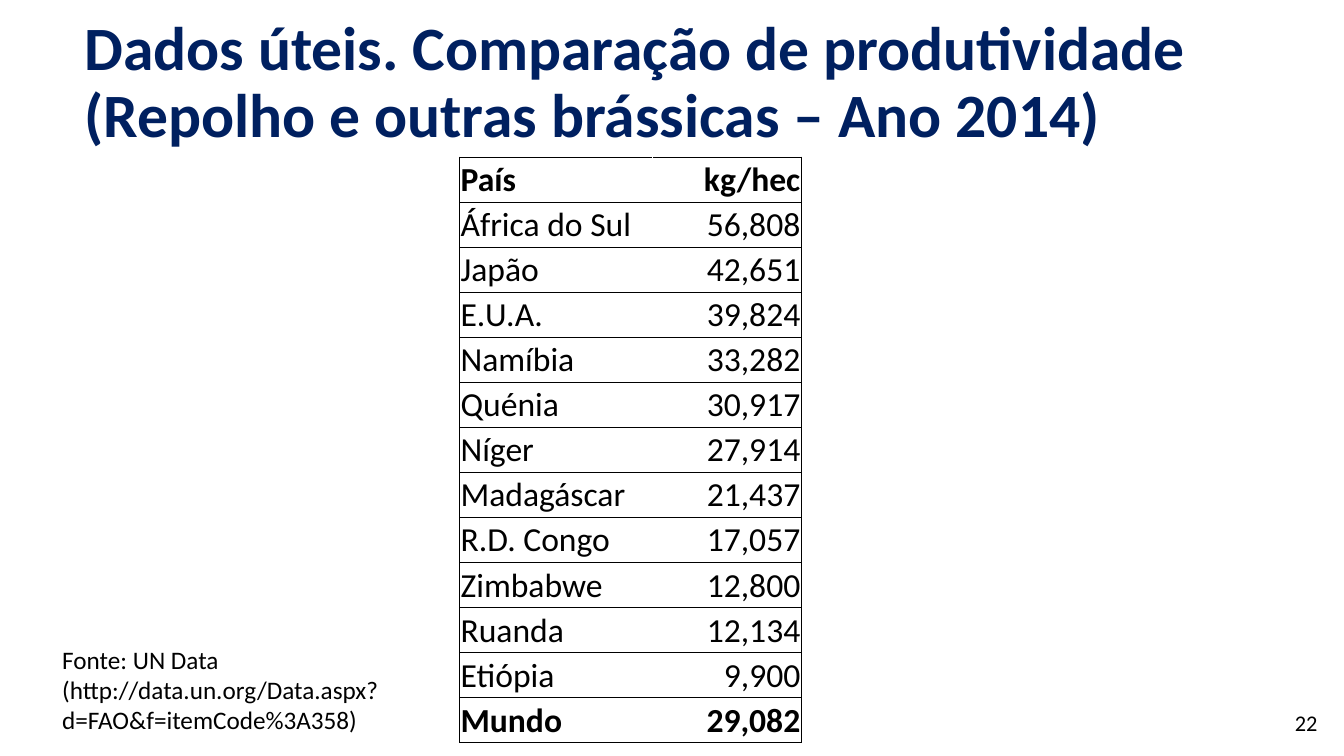
from dataclasses import dataclass

from lxml import etree
from pptx import Presentation
from pptx.dml.color import RGBColor
from pptx.enum import text as t
from pptx.oxml import ns
from pptx.util import Pt


@dataclass(frozen=True)
class Theme:
    font: str = "Calibri"
    title_color: RGBColor = RGBColor(0x00, 0x20, 0x60)
    ink: RGBColor = RGBColor(0, 0, 0)
    paper: RGBColor = RGBColor(255, 255, 255)
    title_size: float = 44
    table_size: float = 24
    source_size: float = 18
    number_size: float = 16


@dataclass(frozen=True)
class Label:
    text: str
    left: float
    top: float
    width: float
    height: float
    size: float
    color: RGBColor
    bold: bool = False
    align: t.PP_ALIGN = t.PP_ALIGN.LEFT
    anchor: t.MSO_ANCHOR = t.MSO_ANCHOR.MIDDLE
    line_spacing: float = 1.0


@dataclass(frozen=True)
class Yield:
    country: str
    amount: str
    bold: bool = False


THEME = Theme()

LABELS = [
    Label("Dados úteis. Comparação de produtividade\v(Repolho e outras brássicas – Ano 2014)",
          53.3, 7.9, 877.7, 104.4, THEME.title_size, THEME.title_color,
          bold=True, line_spacing=0.9),
    Label("22", 732.2, 501.8, 216, 28.8, THEME.number_size, THEME.ink,
          align=t.PP_ALIGN.RIGHT),
    Label("Fonte: UN Data (http://data.un.org/Data.aspx?d=FAO&f=itemCode%3A358)",
          37.4, 456.5, 266.4, 72.7, THEME.source_size, THEME.ink,
          anchor=t.MSO_ANCHOR.TOP),
]

YIELDS = [
    Yield("País", "kg/hec", bold=True),
    Yield("África do Sul", "56,808"),
    Yield("Japão", "42,651"),
    Yield("E.U.A.", "39,824"),
    Yield("Namíbia", "33,282"),
    Yield("Quénia", "30,917"),
    Yield("Níger", "27,914"),
    Yield("Madagáscar", "21,437"),
    Yield("R.D. Congo", "17,057"),
    Yield("Zimbabwe", "12,800"),
    Yield("Ruanda", "12,134"),
    Yield("Etiópia", "9,900"),
    Yield("Mundo", "29,082", bold=True),
]
TABLE_LEFT, TABLE_TOP = 328.3, 112.3
COLUMN_WIDTHS = (137.5, 106.6)
ROW_HEIGHT = 32.18


def style_paragraph(paragraph, size: float, color: RGBColor, bold: bool,
                    align: t.PP_ALIGN) -> None:
    paragraph.alignment = align
    font = paragraph.font
    font.name, font.size, font.bold = THEME.font, Pt(size), bold
    font.color.rgb = color


def add_label(slide, label: Label) -> None:
    box = slide.shapes.add_textbox(Pt(label.left), Pt(label.top),
                                   Pt(label.width), Pt(label.height))
    frame = box.text_frame
    frame.word_wrap = True
    frame.vertical_anchor = label.anchor
    frame.text = label.text
    paragraph = frame.paragraphs[0]
    paragraph.line_spacing = label.line_spacing
    style_paragraph(paragraph, label.size, label.color, label.bold, label.align)


def set_borders(cell, sides: str) -> None:
    """Draw 1 pt lines on the sides named by L, R, T and B, in that order."""
    properties = cell._tc.get_or_add_tcPr()
    for index, side in enumerate(sides):
        line = etree.Element(ns.qn(f"a:ln{side}"), w=str(Pt(1)))
        fill = etree.SubElement(line, ns.qn("a:solidFill"))
        etree.SubElement(fill, ns.qn("a:srgbClr"), val=str(THEME.ink))
        properties.insert(index, line)


def fill_cell(cell, content: str, bold: bool, align: t.PP_ALIGN, sides: str) -> None:
    cell.margin_left = cell.margin_right = cell.margin_top = Pt(0.7)
    cell.margin_bottom = Pt(0)
    cell.vertical_anchor = t.MSO_ANCHOR.MIDDLE
    cell.fill.solid()
    cell.fill.fore_color.rgb = THEME.paper
    set_borders(cell, sides)
    cell.text = content
    style_paragraph(cell.text_frame.paragraphs[0], THEME.table_size, THEME.ink, bold, align)


def add_yield_table(slide, yields: list[Yield]) -> None:
    table = slide.shapes.add_table(
        len(yields), len(COLUMN_WIDTHS), Pt(TABLE_LEFT), Pt(TABLE_TOP),
        Pt(sum(COLUMN_WIDTHS)), Pt(ROW_HEIGHT * len(yields))).table
    table.first_row = table.horz_banding = False
    for column, width in zip(table.columns, COLUMN_WIDTHS):
        column.width = Pt(width)
    for index, entry in enumerate(yields):
        table.rows[index].height = Pt(ROW_HEIGHT)
        fill_cell(table.cell(index, 0), entry.country, entry.bold, t.PP_ALIGN.LEFT, "LTB")
        fill_cell(table.cell(index, 1), entry.amount, entry.bold, t.PP_ALIGN.RIGHT, "RTB")


def main() -> None:
    presentation = Presentation()
    presentation.slide_width, presentation.slide_height = Pt(960), Pt(540)
    slide = presentation.slides.add_slide(presentation.slide_layouts[6])
    add_yield_table(slide, YIELDS)
    for label in LABELS:
        add_label(slide, label)
    presentation.save("out.pptx")


if __name__ == "__main__":
    main()
